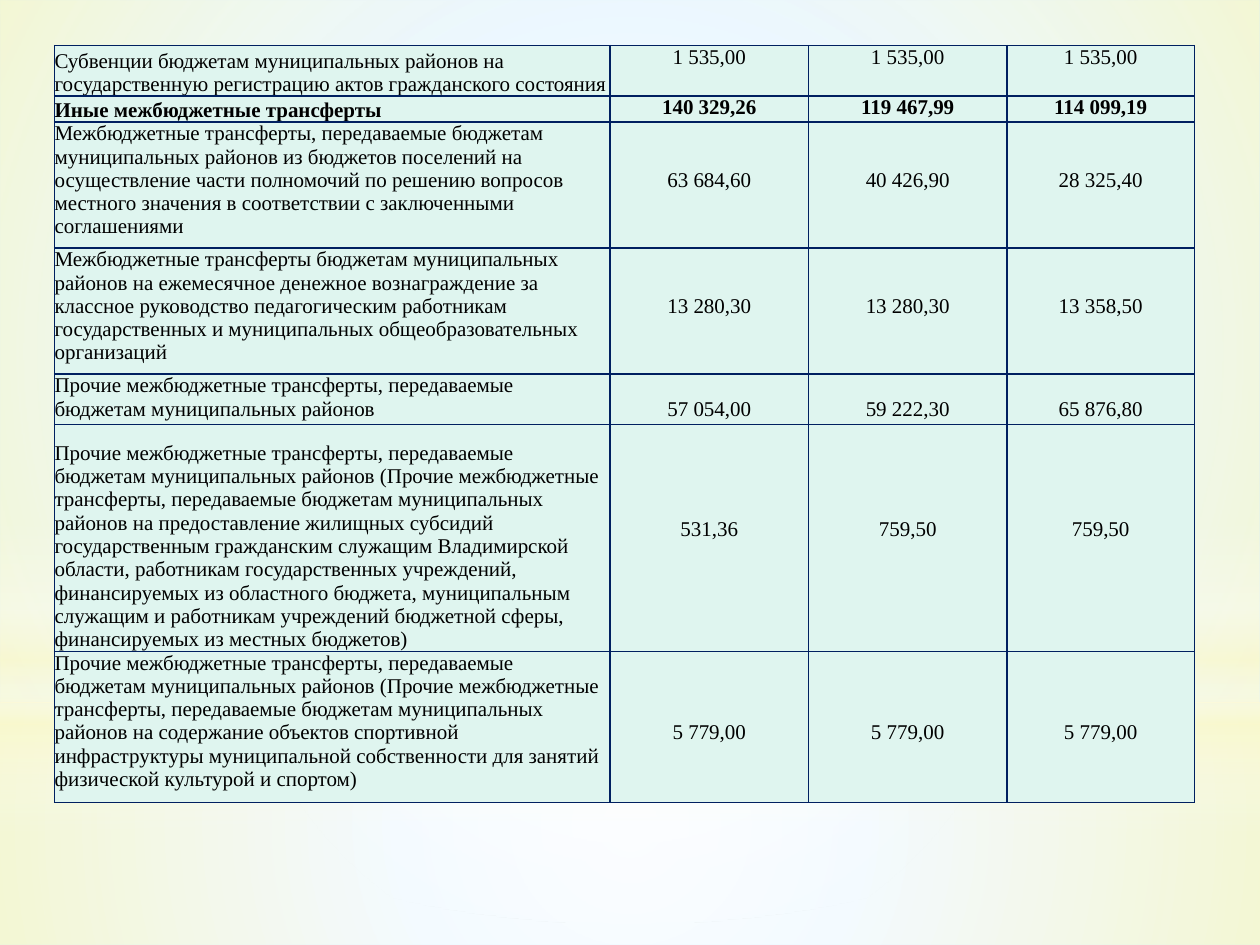
from pptx import Presentation
from pptx.dml.color import RGBColor
from pptx.enum.shapes import MSO_SHAPE as Preset
from pptx.enum.text import MSO_ANCHOR as Anchor, PP_ALIGN as Align
from pptx.oxml import parse_xml
from pptx.oxml.ns import nsdecls, qn
from pptx.util import Cm, Pt

SKY = RGBColor(0xCC, 0xEC, 0xFF)
WHITE = RGBColor(0xFF, 0xFF, 0xFF)
CREAM = RGBColor(0xFE, 0xFA, 0xC9)
MINT = RGBColor(0xDF, 0xF5, 0xEF)
NAVY = RGBColor(0x00, 0x20, 0x60)
BLACK = RGBColor(0, 0, 0)

# Backdrop layers: preset, (left, top, width, height) in cm, radial or not,
# stops as (position %, colour, opacity %)
LAYERS = [
    (Preset.RECTANGLE, (0, 14.17, 25.4, 4.88), True,
     [(0, WHITE, 91), (37, WHITE, 76), (100, CREAM, 79)]),
    (Preset.RECTANGLE, (0, 0, 25.4, 14.17), True,
     [(0, WHITE, 89), (48, WHITE, 62), (100, CREAM, 79)]),
    (Preset.RECTANGLE, (0, 10.46, 25.4, 6.35), False,
     [(0, WHITE, 0), (29, WHITE, 30), (45, CREAM, 40),
      (55, WHITE, 26), (65, CREAM, 60), (100, WHITE, 0)]),
    (Preset.OVAL, (0, 4.45, 25.4, 14.17), True,
     [(0, WHITE, 100), (56, WHITE, 0)]),
]

COLUMN_WIDTHS = (11.2, 4, 4, 3.78)
LINE_HEIGHT = 0.47
TOP, BOTTOM = Anchor.TOP, Anchor.BOTTOM
OTHER = "Прочие межбюджетные трансферты, передаваемые бюджетам муниципальных районов"
OTHER_DETAIL = (OTHER + " (Прочие межбюджетные трансферты, передаваемые "
                "бюджетам муниципальных районов на ")

# Row height in cm, label anchor, lines above the values, bold, label, values
ROWS = [
    (1.02, BOTTOM, 0, False,
     "Субвенции бюджетам муниципальных районов на государственную "
     "регистрацию актов гражданского состояния",
     ("1 535,00", "1 535,00", "1 535,00")),
    (0.52, BOTTOM, 0, True, "Иные межбюджетные трансферты",
     ("140 329,26", "119 467,99", "114 099,19")),
    (2.54, TOP, 2, False,
     "Межбюджетные трансферты, передаваемые бюджетам муниципальных районов "
     "из бюджетов поселений на осуществление части полномочий по решению "
     "вопросов местного значения в соответствии с заключенными соглашениями",
     ("63 684,60", "40 426,90", "28 325,40")),
    (2.54, TOP, 2, False,
     "Межбюджетные трансферты бюджетам муниципальных районов на ежемесячное "
     "денежное вознаграждение за классное руководство педагогическим "
     "работникам государственных и муниципальных общеобразовательных организаций",
     ("13 280,30", "13 280,30", "13 358,50")),
    (1.02, TOP, 1, False, OTHER, ("57 054,00", "59 222,30", "65 876,80")),
    (4.57, BOTTOM, 4, False,
     OTHER_DETAIL + "предоставление жилищных субсидий государственным "
     "гражданским служащим Владимирской области, работникам государственных "
     "учреждений, финансируемых из областного бюджета, муниципальным служащим "
     "и работникам учреждений бюджетной сферы, финансируемых из местных бюджетов)",
     ("531,36", "759,50", "759,50")),
    (3.05, TOP, 3, False,
     OTHER_DETAIL + "содержание объектов спортивной инфраструктуры "
     "муниципальной собственности для занятий физической культурой и спортом)",
     ("5 779,00", "5 779,00", "5 779,00")),
]


def add_layer(page, preset, bounds, radial, stops):
    shape = page.shapes.add_shape(preset, *map(Cm, bounds))
    shape.shadow.inherit = False
    shape.line.fill.background()
    shape.fill.background()
    stop_xml = "".join(
        f'<a:gs pos="{position * 1000}"><a:srgbClr val="{color}">'
        f'<a:alpha val="{opacity * 1000}"/></a:srgbClr></a:gs>'
        for position, color, opacity in stops)
    direction = ('<a:path path="circle"><a:fillToRect l="50000" t="50000" '
                 'r="50000" b="50000"/></a:path>' if radial
                 else '<a:lin ang="5400000" scaled="0"/>')
    gradient = parse_xml(f'<a:gradFill {nsdecls("a")} rotWithShape="1">'
                         f'<a:gsLst>{stop_xml}</a:gsLst>{direction}</a:gradFill>')
    properties = shape._element.spPr
    properties.replace(properties.find(qn("a:noFill")), gradient)


def fill_cell(cell, text, bold, align, anchor, lines_above=0):
    margins = {"margin_left": 0, "margin_right": 0, "margin_bottom": 0,
               "margin_top": Cm(lines_above * LINE_HEIGHT)}
    for name, value in margins.items():
        setattr(cell, name, value)
    cell.vertical_anchor = anchor
    for side in "LRTB":
        cell._tc.get_or_add_tcPr().append(parse_xml(
            f'<a:ln{side} {nsdecls("a")} w="{Pt(1)}"><a:solidFill>'
            f'<a:srgbClr val="{NAVY}"/></a:solidFill></a:ln{side}>'))
    cell.fill.solid()
    cell.fill.fore_color.rgb = MINT
    para = cell.text_frame.paragraphs[0]
    para.alignment = align
    span = para.add_run()
    span.text = text
    font = {"name": "Times New Roman", "size": Pt(12), "bold": bold}
    for name, value in font.items():
        setattr(span.font, name, value)
    span.font.color.rgb = BLACK


def add_budget_table(page):
    heights = [row[0] for row in ROWS]
    table = page.shapes.add_table(
        len(ROWS), len(COLUMN_WIDTHS), Cm(1.1), Cm(0.92),
        Cm(sum(COLUMN_WIDTHS)), Cm(sum(heights))).table
    table.first_row = table.horz_banding = False
    for column, width in zip(table.columns, COLUMN_WIDTHS):
        column.width = Cm(width)
    for row, (height, anchor, lines_above, bold, label, values) in zip(table.rows, ROWS):
        row.height = Cm(height)
        label_cell, *value_cells = row.cells
        fill_cell(label_cell, label, bold, Align.LEFT, anchor)
        for cell, value in zip(value_cells, values):
            fill_cell(cell, value, bold, Align.CENTER, TOP, lines_above)


def main():
    deck = Presentation()
    deck.slide_width, deck.slide_height = Cm(25.4), Cm(19.05)
    page = deck.slides.add_slide(deck.slide_layouts[6])
    page.background.fill.solid()
    page.background.fill.fore_color.rgb = SKY
    for layer in LAYERS:
        add_layer(page, *layer)
    add_budget_table(page)
    deck.save("out.pptx")


if __name__ == "__main__":
    main()
